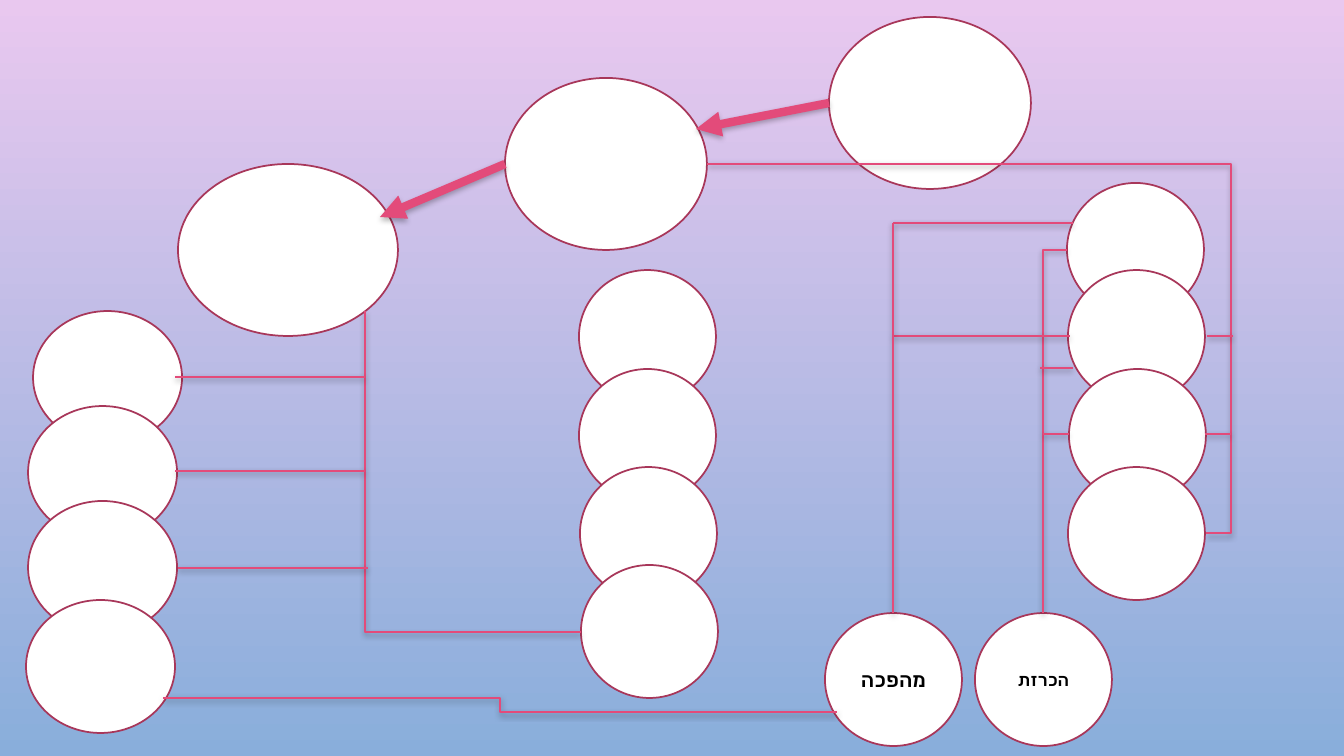
from dataclasses import dataclass

from lxml import etree
from pptx import Presentation
from pptx.dml.color import RGBColor
from pptx.enum.shapes import MSO_CONNECTOR, MSO_SHAPE
from pptx.enum.text import MSO_ANCHOR, PP_ALIGN
from pptx.oxml.ns import qn
from pptx.util import Pt

OVAL = MSO_SHAPE.OVAL
STRAIGHT, ELBOW = MSO_CONNECTOR.STRAIGHT, MSO_CONNECTOR.ELBOW
CENTER, MIDDLE = PP_ALIGN.CENTER, MSO_ANCHOR.MIDDLE


@dataclass(frozen=True)
class Theme:
    top: str = "E9C8EF"
    base: str = "89AEDB"
    fill: str = "FFFFFF"
    edge: str = "A8375A"
    link: str = "E34B7A"
    ink: str = "000000"
    font: str = "Calibri"
    rim: float = 1.25
    thin: float = 1.75
    thick: float = 6


THEME = Theme()

# Content, in px
SIZE = (1344, 756)
# Groups of circles: width, height, corners
GROUPS = [
    (202, 172, [(829, 17), (505, 78)]),
    (220, 172, [(178, 164)]),
    (137, 133, [(1067, 183), (1068, 270), (1069, 369), (1068, 467)]),
    (137, 133, [(579, 270), (579, 369), (580, 467), (581, 565)]),
    (149, 133, [(33, 311), (28, 406), (28, 501), (26, 600)]),
]
# Labelled circles: x, text, type size
LABELS = [(825, "מהפכה", 14), (975, "הכרזת", 12)]
LABEL_Y, LABEL_W, LABEL_H = 613, 137, 133

# Level lines: y, from x, to x
LEVELS = [
    (434, 1069, 1043), (223, 1073, 893), (336, 1070, 893), (368, 1073, 1040),
    (434, 1231, 1205), (336, 1233, 1207),
    (377, 365, 175), (471, 365, 175), (568, 368, 178),
]
STEMS = [(893, 613, 223)]  # x, from y, to y
ARROWS = [(829, 103, 696, 129), (505, 164, 380, 217)]
# Bent lines: ends, and where the middle leg falls (None: one corner)
BENDS = [
    (1067, 250, 1043, 613, None),
    (1206, 533, 707, 164, -0.05),
    (581, 632, 365, 311, None),
    (837, 712, 163, 698, 0.5),
]

deck = Presentation()
SCALE = 914400 / 100.8


def px(*vals):
    return [round(v * SCALE) for v in vals]


def rgb(code):
    return RGBColor.from_string(code)


def sub(node, tag, **attrs):
    return etree.SubElement(node, qn(tag), attrs)


deck.slide_width, deck.slide_height = px(*SIZE)
slide = deck.slides.add_slide(deck.slide_layouts[6])

# Background
back = slide.background.fill
back.gradient()
back.gradient_angle = 270
for stop, code in zip(back.gradient_stops, (THEME.top, THEME.base)):
    stop.color.rgb = rgb(code)


def circle(x, y, w, h):
    disc = slide.shapes.add_shape(OVAL, *px(x, y, w, h))
    disc.shadow.inherit = False
    disc.fill.solid()
    disc.fill.fore_color.rgb = rgb(THEME.fill)
    disc.line.color.rgb = rgb(THEME.edge)
    disc.line.width = Pt(THEME.rim)
    return disc


def label(disc, text, size):
    frame = disc.text_frame
    frame.vertical_anchor = MIDDLE
    para = frame.paragraphs[0]
    para.alignment = CENTER
    para._p.get_or_add_pPr().set("rtl", "1")
    run = para.add_run()
    run.text = text
    font = run.font
    font.name, font.size, font.bold = THEME.font, Pt(size), True
    font.color.rgb = rgb(THEME.ink)
    sub(run._r.get_or_add_rPr(), "a:cs", typeface=THEME.font)


def link(x1, y1, x2, y2, kind=STRAIGHT, width=THEME.thin):
    line = slide.shapes.add_connector(kind, *px(x1, y1, x2, y2))
    line.line.color.rgb = rgb(THEME.link)
    line.line.width = Pt(width)
    glow = sub(sub(line._element.spPr, "a:effectLst"), "a:outerShdw",
               blurRad=str(Pt(4)), dist=str(Pt(2)), dir="5400000",
               rotWithShape="0")
    tone = sub(glow, "a:srgbClr", val=THEME.ink)
    sub(tone, "a:alpha", val="28000")
    return line


# Circles
for w, h, spots in GROUPS:
    for x, y in spots:
        circle(x, y, w, h)
for x, text, size in LABELS:
    label(circle(x, LABEL_Y, LABEL_W, LABEL_H), text, size)

# Bent lines
for *ends, turn in BENDS:
    geom = link(*ends, kind=ELBOW)._element.spPr.find(qn("a:prstGeom"))
    if turn is None:
        geom.set("prst", "bentConnector2")
    else:
        sub(geom.find(qn("a:avLst")), "a:gd", name="adj1",
            fmla=f"val {round(turn * 100000)}")

# Straight lines
for y, x1, x2 in LEVELS:
    link(x1, y, x2, y)
for x, y1, y2 in STEMS:
    link(x, y1, x, y2)

# Arrows
for ends in ARROWS:
    arrow = link(*ends, width=THEME.thick)
    sub(arrow.line._get_or_add_ln(), "a:tailEnd", type="triangle")

deck.save("out.pptx")
